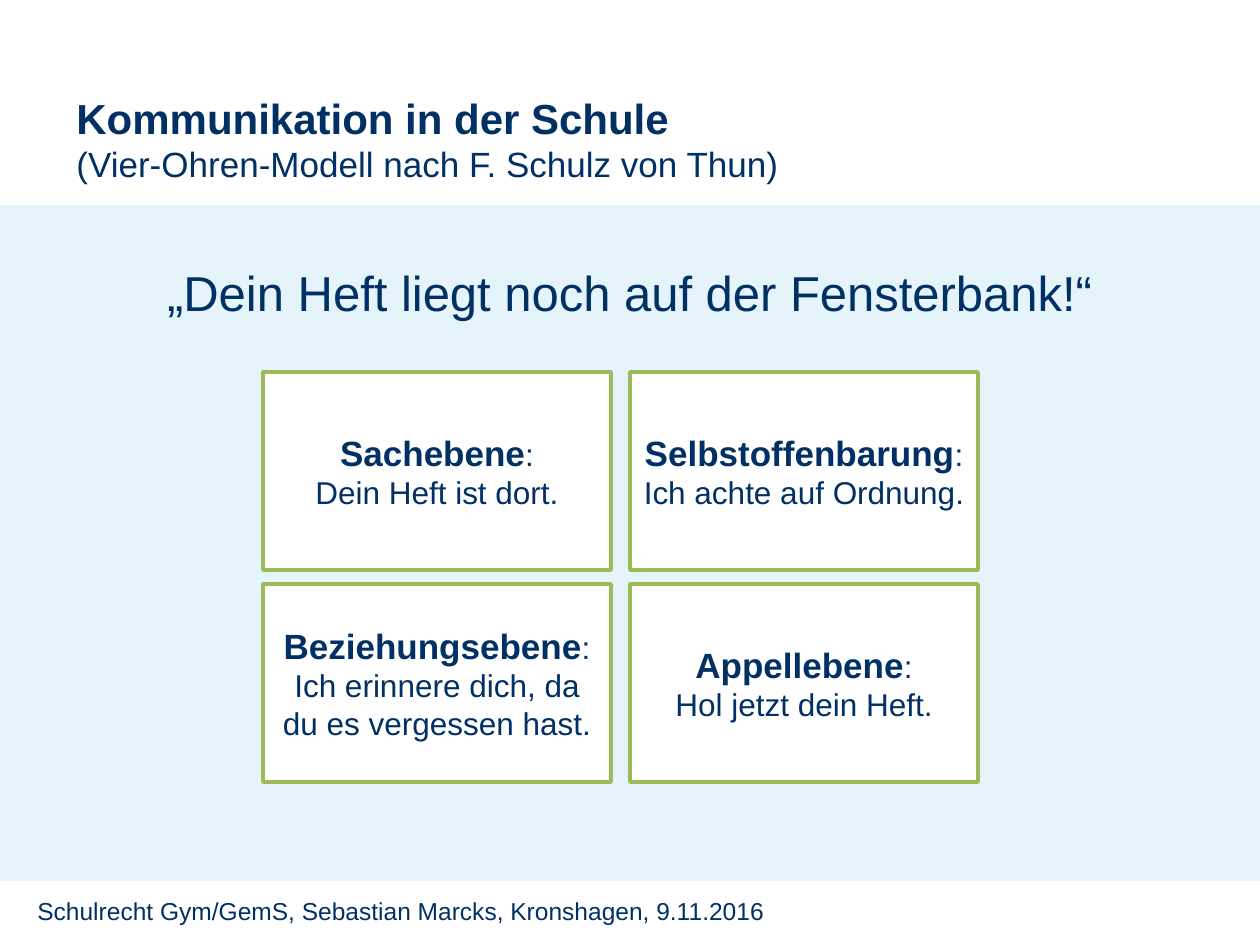
from itertools import product

from lxml.etree import SubElement
from pptx import Presentation
from pptx.dml.color import RGBColor
from pptx.enum.shapes import MSO_SHAPE as Shape
from pptx.enum.text import MSO_ANCHOR as Anchor, PP_ALIGN as Align
from pptx.oxml.ns import qn
from pptx.util import Pt

SCALE = 914400 / 126
NAVY, GREEN, BLUE, WHITE = "003064", "9BBB59", "008CCF", "FFFFFF"
LEVELS = [
    ("Sachebene", "Dein Heft ist dort."),
    ("Selbstoffenbarung", "Ich achte auf Ordnung."),
    ("Beziehungsebene", "Ich erinnere dich, da du es vergessen hast."),
    ("Appellebene", "Hol jetzt dein Heft."),
]


def emu(*lengths):
    """Turn px lengths into EMU."""
    return [round(length * SCALE) for length in lengths]


def paint(color_format, color):
    """Set a fill, line or font colour from a hex string."""
    color_format.rgb = RGBColor.from_string(color)


def style(font, size, bold=False):
    """Give a font the slide's typeface and colour."""
    font.name, font.size, font.bold = "Arial", Pt(size), bold
    paint(font.color, NAVY)


def add_panel(slide, box, preset, color):
    """Add a filled shape without outline or shadow."""
    panel = slide.shapes.add_shape(preset, *emu(*box))
    panel.shadow.inherit = False
    panel.fill.solid()
    paint(panel.fill.fore_color, color)
    panel.line.fill.background()
    return panel


def add_band(slide, box):
    """Add the translucent blue band behind the content."""
    band = add_panel(slide, box, Shape.RECTANGLE, BLUE)
    tint = band._element.spPr.find(qn("a:solidFill"))[0]
    SubElement(tint, qn("a:alpha"), val="10000")


def add_text(slide, box, lines, align=Align.LEFT):
    """Add a text box with one paragraph per (text, size, bold) line."""
    frame = slide.shapes.add_textbox(*emu(*box)).text_frame
    frame.word_wrap = True
    for index, (text, size, bold) in enumerate(lines):
        paragraph = frame.add_paragraph() if index else frame.paragraphs[0]
        paragraph.text = text
        paragraph.alignment = align
        style(paragraph.font, size, bold)


def add_level(slide, box, name, message):
    """Add one card with a level's name and message."""
    card = add_panel(slide, box, Shape.FLOWCHART_PROCESS, WHITE)
    paint(card.line.color, GREEN)
    card.line.width = Pt(2)
    frame = card.text_frame
    frame.word_wrap = True
    frame.vertical_anchor = Anchor.MIDDLE
    heading, body = frame.paragraphs[0], frame.add_paragraph()
    for text, size, bold in [(name, 20, True), (":", 18, False)]:
        run = heading.add_run()
        run.text = text
        style(run.font, size, bold)
    body.text = message
    style(body.font, 18)
    heading.alignment = body.alignment = Align.CENTER


def add_levels(slide, box):
    """Lay the four levels out in a two by two grid."""
    left, top, width, height = box
    column_gap, row_gap = 19, 14
    card_width, card_height = (width - column_gap) / 2, (height - row_gap) / 2
    for (row, column), (name, message) in zip(product(range(2), repeat=2), LEVELS):
        x = left + column * (card_width + column_gap)
        y = top + row * (card_height + row_gap)
        add_level(slide, (x, y, card_width, card_height), name, message)


def main():
    """Build and save the slide."""
    deck = Presentation()
    deck.slide_width, deck.slide_height = emu(1260, 945)
    slide = deck.slides.add_slide(deck.slide_layouts[6])
    add_band(slide, (0, 205, 1260, 676))
    add_text(slide, (25, 890, 1081, 66),
             [("Schulrecht Gym/GemS, Sebastian Marcks, Kronshagen, 9.11.2016", 14, False)])
    add_text(slide, (64, 86, 755, 106),
             [("Kommunikation in der Schule", 24, True),
              ("(Vier-Ohren-Modell nach F. Schulz von Thun)", 20, False)])
    add_text(slide, (89, 256, 1081, 72),
             [("„Dein Heft liegt noch auf der Fensterbank!“", 28, False)], Align.CENTER)
    add_levels(slide, (263, 372, 715, 410))
    deck.save("out.pptx")


if __name__ == "__main__":
    main()
